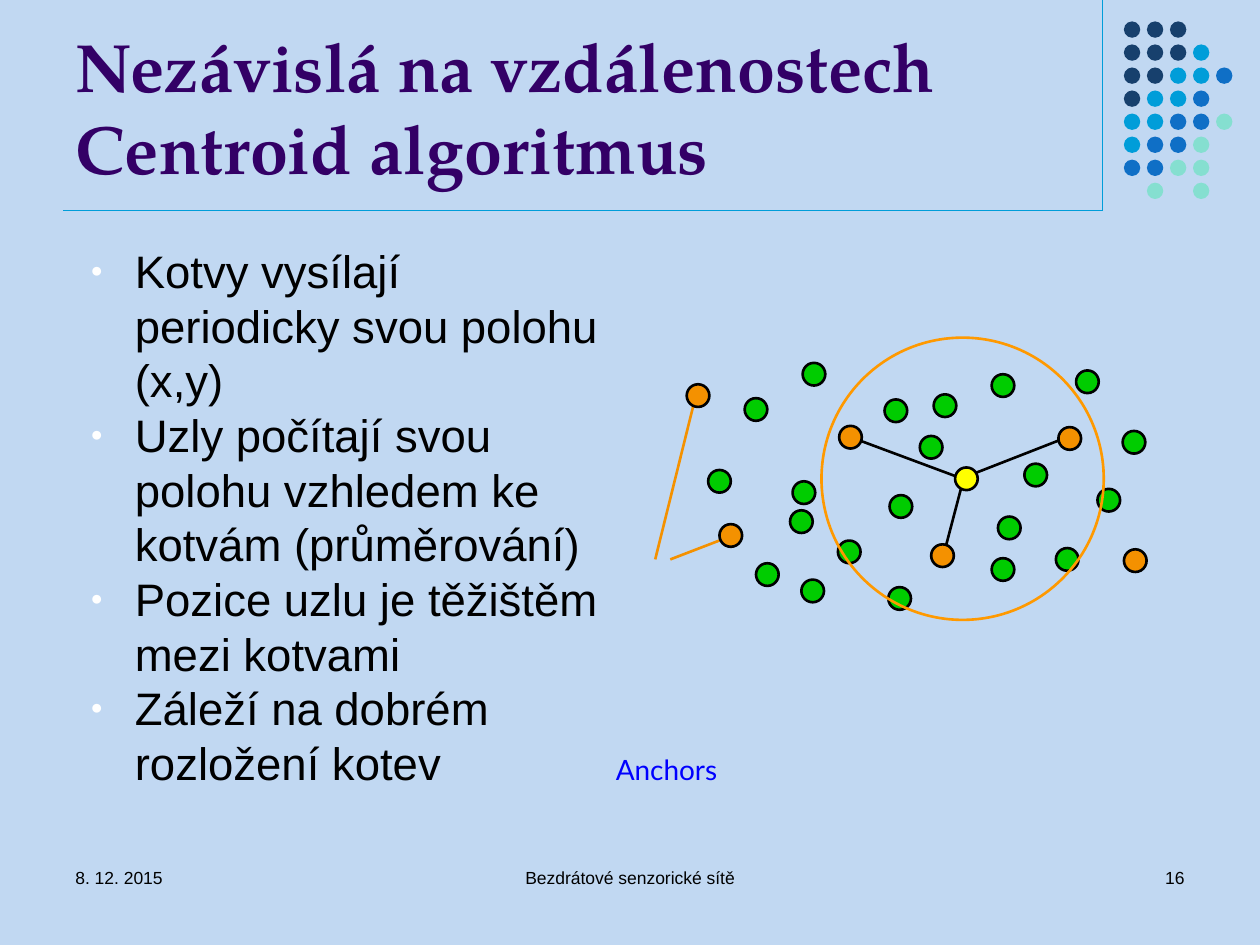
from lxml import etree
from pptx import Presentation
from pptx.dml.color import RGBColor
from pptx.enum import shapes, text
from pptx.oxml.ns import qn
from pptx.util import Inches, Pt

COLORS = {
    "background": "C1D8F2", "title": "330066", "text": "000000", "label": "0000FF",
    "bullet": "FFFFFF", "navy": "17406D", "sky": "009DD9", "blue": "0F6FC6",
    "mint": "85DFD0", "node": "00CC00", "anchor": "F49100", "unknown": "FFFF00",
    "range": "FF9900",
}
TITLE = ["Nezávislá na vzdálenostech", "Centroid algoritmus"]
POINTS = [
    "Kotvy vysílají periodicky svou polohu (x,y)",
    "Uzly počítají svou polohu vzhledem ke kotvám (průměrování)",
    "Pozice uzlu je těžištěm mezi kotvami",
    "Záleží na dobrém rozložení kotev",
]
ALIGN = text.PP_ALIGN
FOOTERS = [
    ("8. 12. 2015", (0.5, 6.83, 2.33, 0.5), ALIGN.LEFT),
    ("Bezdrátové senzorické sítě", (3.42, 6.83, 3.16, 0.5), ALIGN.CENTER),
    ("16", (7.17, 6.83, 2.33, 0.5), ALIGN.RIGHT),
]
DOT_KEYS = {"n": "navy", "s": "sky", "b": "blue", "m": "mint"}
DOT_ROWS = ["nnn", "nnns", "nnssb", "nssb", "ssbbm", "sbbm", "bbmm", " m m"]
DOT_ORIGIN, DOT_SPAN, DOT_SIZE = (8.92, 0.17), 1.28, 0.13

RULES = [((8.75, 0), (8.75, 1.67)), ((0.5, 1.67), (8.75, 1.67))]
ANCHOR_POINTERS = [((5.32, 4.44), (5.71, 4.29)), ((5.2, 4.44), (5.52, 3.15))]
CENTROID_LINKS = [
    ((6.78, 3.48), (7.64, 3.8)), ((7.65, 3.79), (8.47, 3.47)), ((7.65, 3.79), (7.49, 4.4)),
]
NODE_SIZE = 0.18
NODES = {
    "node": [
        (5.91, 3.16), (6.29, 3.82), (6.65, 4.29), (7.06, 3.93), (7.02, 3.17), (7.41, 3.13),
        (7.3, 3.46), (7.87, 2.97), (7.92, 4.1), (8.71, 3.88), (6.27, 4.05), (5.62, 3.73),
        (6.37, 2.88), (6, 4.47), (8.38, 4.35), (8.54, 2.94), (7.05, 4.66), (7.87, 4.43),
        (6.36, 4.6), (8.91, 3.42), (8.13, 3.68),
    ],
    "anchor": [(6.66, 3.38), (8.4, 3.39), (5.71, 4.16), (7.39, 4.32), (8.92, 4.36), (5.45, 3.05)],
    "unknown": [(7.58, 3.71)],
}


def color(name):
    return RGBColor.from_string(COLORS[name])


def place(shape, bounds):
    for side, length in zip(("left", "top", "width", "height"), bounds):
        setattr(shape, side, Inches(length))


def write(frame, lines, ink, spacing=None, align=ALIGN.LEFT, **font):
    """Fill a text frame with one paragraph per line and return the paragraphs."""
    frame.text = "\n".join(lines)
    for para in frame.paragraphs:
        layout = {"alignment": align, "space_before": Pt(0), "line_spacing": spacing}
        for name, value in layout.items():
            setattr(para, name, value)
        for span in para.runs:
            for name, value in font.items():
                setattr(span.font, name, value)
            span.font.color.rgb = color(ink)
    return frame.paragraphs


def add_label(page, words, bounds, side_margin=0.1, **style):
    box = page.shapes.add_textbox(*map(Inches, bounds))
    frame = box.text_frame
    frame.word_wrap = True
    frame.margin_left = frame.margin_right = Inches(side_margin)
    write(frame, [words], **style)


def add_circle(page, x, y, size, fill=None, line=None):
    circle = page.shapes.add_shape(
        shapes.MSO_SHAPE.OVAL, *map(Inches, (x, y, size, size)))
    circle.shadow.inherit = False
    if fill:
        circle.fill.solid()
        circle.fill.fore_color.rgb = color(fill)
    else:
        circle.fill.background()
    if line:
        circle.line.color.rgb = color(line)
        circle.line.width = Pt(1.5)
    else:
        circle.line.fill.background()


def add_lines(page, ends, ink, width):
    for start, end in ends:
        line = page.shapes.add_connector(
            shapes.MSO_CONNECTOR.STRAIGHT, *map(Inches, start + end))
        line.line.color.rgb = color(ink)
        line.line.width = Pt(width)
        etree.SubElement(line._element.spPr, qn("a:effectLst"))


def add_bullet(para):
    props = para._p.get_or_add_pPr()
    props.set("marL", str(Inches(0.47)))
    props.set("indent", str(Inches(-0.35)))
    tint = etree.SubElement(props, qn("a:buClr"))
    etree.SubElement(tint, qn("a:srgbClr"), val=COLORS["bullet"])
    etree.SubElement(props, qn("a:buSzPct"), val="45000")
    etree.SubElement(props, qn("a:buFont"), typeface="Arial")
    etree.SubElement(props, qn("a:buChar"), char="●")


def add_texts(page):
    title, body = page.placeholders
    place(title, (0.5, 0.13, 8.25, 1.41))
    place(body, (0.5, 1.88, 4.46, 4.82))
    for holder, anchor in ((title, text.MSO_ANCHOR.BOTTOM), (body, text.MSO_ANCHOR.TOP)):
        holder.text_frame.vertical_anchor = anchor
        holder.text_frame.auto_size = text.MSO_AUTO_SIZE.NONE
    write(title.text_frame, TITLE, "title", name="TeX Gyre Pagella", size=Pt(39), bold=True)
    for para in write(body.text_frame, POINTS, "text", Pt(31.2), name="Arial", size=Pt(26)):
        add_bullet(para)
    for words, bounds, align in FOOTERS:
        add_label(page, words, bounds, ink="text", align=align, name="Arial", size=Pt(10))


def add_dots(page):
    left, top = DOT_ORIGIN
    step = DOT_SPAN / (len(DOT_ROWS) - 1)
    for row, keys in enumerate(DOT_ROWS):
        for column, key in enumerate(keys):
            if key in DOT_KEYS:
                add_circle(page, left + column * step, top + row * step,
                           DOT_SIZE, DOT_KEYS[key])


def add_network(page):
    add_lines(page, ANCHOR_POINTERS, "anchor", 1.5)
    add_lines(page, CENTROID_LINKS, "text", 1.5)
    for kind, spots in NODES.items():
        for x, y in spots:
            add_circle(page, x, y, NODE_SIZE, kind, "text")
    add_label(page, "Anchors", (4.8, 5.92, 0.98, 0.36), side_margin=0, ink="label",
              align=ALIGN.CENTER, name="Lato", size=Pt(16))
    add_circle(page, 6.52, 2.68, 2.24, line="range")


def main():
    deck = Presentation()
    deck.slide_width, deck.slide_height = Inches(10), Inches(7.5)
    page = deck.slides.add_slide(deck.slide_layouts[1])
    page.background.fill.solid()
    page.background.fill.fore_color.rgb = color("background")
    add_lines(page, RULES, "sky", 0.75)
    add_dots(page)
    add_texts(page)
    add_network(page)
    deck.save("out.pptx")


if __name__ == "__main__":
    main()
